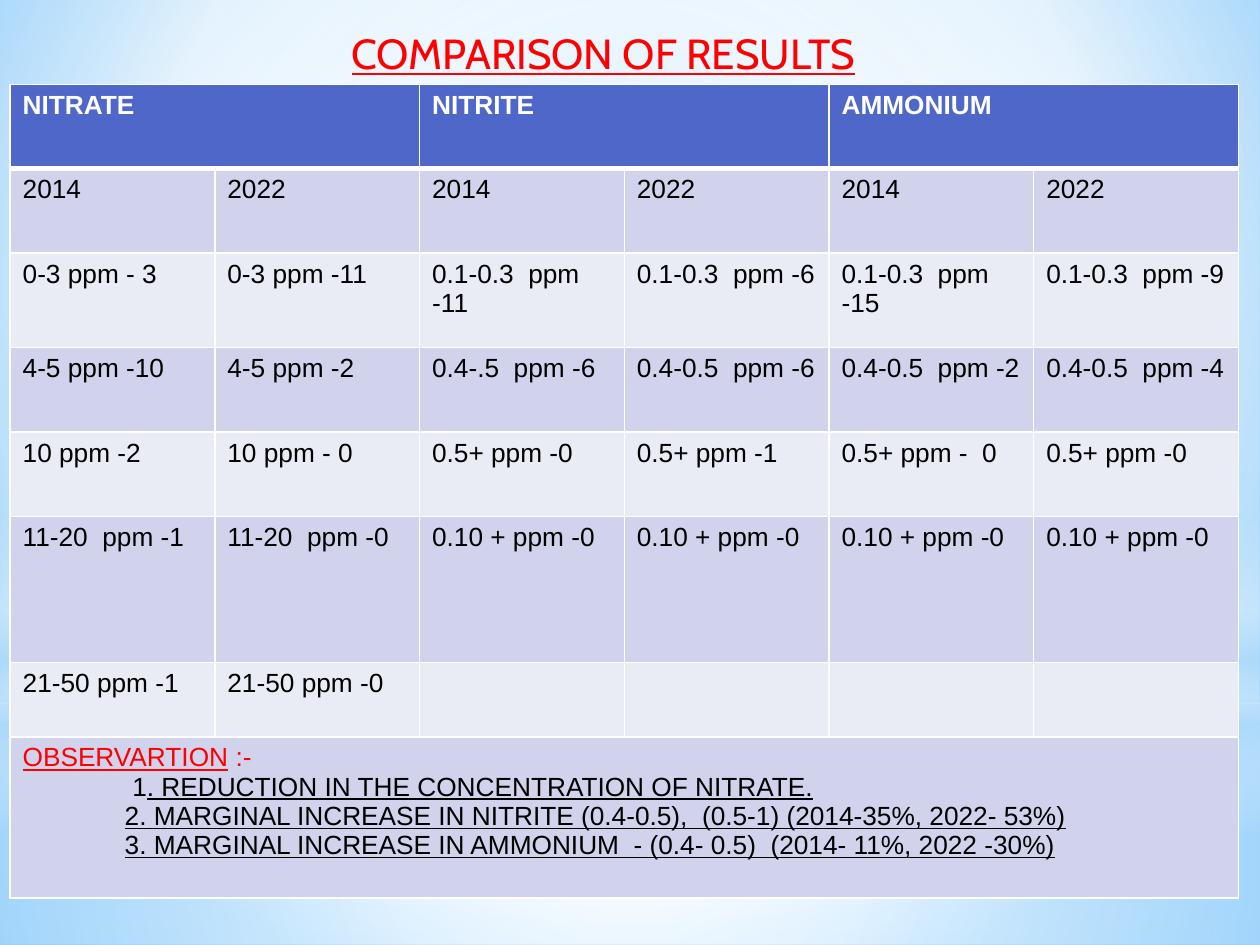
from pptx import Presentation
from pptx.dml.color import RGBColor
from pptx.enum.shapes import MSO_SHAPE
from pptx.enum.text import MSO_ANCHOR, MSO_AUTO_SIZE, PP_ALIGN
from pptx.oxml import parse_xml
from pptx.oxml.ns import nsdecls
from pptx.util import Inches, Pt

RECTANGLE = MSO_SHAPE.RECTANGLE
OVAL = MSO_SHAPE.OVAL
TOP = MSO_ANCHOR.TOP
LEFT = PP_ALIGN.LEFT
GROW = MSO_AUTO_SIZE.SHAPE_TO_FIT_TEXT
TITLE_ONLY = 5

RED = RGBColor(0xFF, 0x00, 0x00)
BLACK = RGBColor(0x00, 0x00, 0x00)
WHITE = RGBColor(0xFF, 0xFF, 0xFF)
HEADER_BLUE = RGBColor(0x4E, 0x67, 0xC8)
BAND_DARK = RGBColor(0xD0, 0xD3, 0xEB)
BAND_LIGHT = RGBColor(0xE9, 0xEB, 0xF5)
SKY = RGBColor(0x9E, 0xD5, 0xFF)
DEEP_SKY = RGBColor(0x5B, 0xB9, 0xFF)
PALE_SKY = RGBColor(0xB4, 0xDC, 0xFA)

# Gradient directions: straight down, or circular around a focus rectangle
DOWNWARD = '<a:lin ang="5400000" scaled="0"/>'
CIRCULAR = ('<a:path path="circle"><a:fillToRect l="{}000" t="{}000" '
            'r="{}000" b="{}000"/></a:path>')
CENTRED = CIRCULAR.format(50, 50, 50, 50)

# Preset, left, top, width, height, (position, colour, opacity) stops, direction
GLOWS = [
    (RECTANGLE, 0, 5.58, 10, 1.92,
     [(0, WHITE, 91), (37, WHITE, 76), (100, PALE_SKY, 79)], CENTRED),
    (RECTANGLE, 0, 0, 10, 5.58,
     [(0, WHITE, 89), (48, WHITE, 62), (100, PALE_SKY, 79)], CENTRED),
    (RECTANGLE, 0, 4.12, 10, 2.5,
     [(0, WHITE, 0), (29, WHITE, 30), (45, PALE_SKY, 40), (55, WHITE, 26),
      (65, PALE_SKY, 60), (100, WHITE, 0)], DOWNWARD),
    (OVAL, 0, 1.75, 10, 5.58, [(0, WHITE, 100), (56, WHITE, 0)], CENTRED),
]

IONS = ["NITRATE", "NITRITE", "AMMONIUM"]
READINGS = [
    ["2014", "2022"] * len(IONS),
    ["0-3 ppm - 3", "0-3 ppm -11", "0.1-0.3  ppm -11", "0.1-0.3  ppm -6",
     "0.1-0.3  ppm -15", "0.1-0.3  ppm -9"],
    ["4-5 ppm -10", "4-5 ppm -2", "0.4-.5  ppm -6", "0.4-0.5  ppm -6",
     "0.4-0.5  ppm -2", "0.4-0.5  ppm -4"],
    ["10 ppm -2", "10 ppm - 0", "0.5+ ppm -0", "0.5+ ppm -1",
     "0.5+ ppm -  0", "0.5+ ppm -0"],
    ["11-20  ppm -1", "11-20  ppm -0"] + ["0.10 + ppm -0"] * 4,
    ["21-50 ppm -1", "21-50 ppm -0"],
]
ROW_HEIGHTS = [0.67, 0.67, 0.75, 0.67, 0.67, 1.16, 0.59, 1.28]
COLUMN_COUNT = 2 * len(IONS)

# Indent in inches, then (text, colour, underlined) runs
OBSERVATIONS = [
    (0, [("OBSERVARTION", RED, True), (" :-", RED, False)]),
    (0.87, [("1", BLACK, False),
            (". REDUCTION IN THE CONCENTRATION OF NITRATE.", BLACK, True)]),
    (0.81, [("2. MARGINAL INCREASE IN NITRITE (0.4-0.5),  (0.5-1) "
             "(2014-35%, 2022- 53%)", BLACK, True)]),
    (0.81, [("3. MARGINAL INCREASE IN AMMONIUM  - (0.4- 0.5)  "
             "(2014- 11%, 2022 -30%)", BLACK, True)]),
]


def apply_gradient(fill, owner, stops, direction):
    fill.gradient()
    stop_xml = "".join(
        f'<a:gs pos="{position}000"><a:srgbClr val="{color}">'
        f'<a:alpha val="{opacity}000"/></a:srgbClr></a:gs>'
        for position, color, opacity in stops)
    gradient = parse_xml(f'<a:gradFill {nsdecls("a")} rotWithShape="1">'
                         f'<a:gsLst>{stop_xml}</a:gsLst>{direction}</a:gradFill>')
    default = owner.xpath(".//a:gradFill")[0]
    default.getparent().replace(default, gradient)


def add_glow(slide, preset, left, top, width, height, stops, direction):
    shape = slide.shapes.add_shape(preset, Inches(left), Inches(top),
                                   Inches(width), Inches(height))
    shape.shadow.inherit = False
    shape.line.fill.background()
    apply_gradient(shape.fill, shape.element, stops, direction)


def format_font(font, size, name, color, bold=False, underline=False):
    font.size = Pt(size)
    font.name = name
    font.color.rgb = color
    font.bold = bold
    font.underline = underline


def set_title(slide, text):
    title = slide.shapes.title
    title.left, title.top = Inches(2.69), Inches(0.17)
    title.width, title.height = Inches(4.33), Inches(0.5)
    text_frame = title.text_frame
    text_frame.text = text
    text_frame.word_wrap = True
    text_frame.auto_size = GROW
    text_frame.vertical_anchor = TOP
    paragraph = text_frame.paragraphs[0]
    paragraph.alignment = LEFT
    format_font(paragraph.runs[0].font, 24, "Cabin", RED, underline=True)
    # Bring the title in front of the glows
    title.element.getparent().append(title.element)


def style_cell(cell, color, bottom_width=1):
    cell.fill.solid()
    cell.fill.fore_color.rgb = color
    properties = cell._tc.get_or_add_tcPr()
    for index, side in enumerate("LRTB"):
        width = Pt(bottom_width if side == "B" else 1)
        properties.insert(index, parse_xml(
            f'<a:ln{side} {nsdecls("a")} w="{width}"><a:solidFill>'
            f'<a:srgbClr val="{WHITE}"/></a:solidFill></a:ln{side}>'))


def write_cell(cell, text, color=BLACK, bold=False):
    cell.text = text
    format_font(cell.text_frame.paragraphs[0].runs[0].font, 15, "Arial", color, bold)


def write_observations(cell):
    text_frame = cell.text_frame
    for index, (indent, runs) in enumerate(OBSERVATIONS):
        paragraph = text_frame.add_paragraph() if index else text_frame.paragraphs[0]
        paragraph._p.get_or_add_pPr().set("marL", str(Inches(indent)))
        for text, color, underline in runs:
            run = paragraph.add_run()
            run.text = text
            format_font(run.font, 15, "Arial", color, underline=underline)


def add_results_table(slide):
    row_count = len(ROW_HEIGHTS)
    table = slide.shapes.add_table(row_count, COLUMN_COUNT, Inches(0.08), Inches(0.67),
                                   Inches(9.75), Inches(6.45)).table
    table.horz_banding = False
    for row_index, height in enumerate(ROW_HEIGHTS):
        table.rows[row_index].height = Inches(height)
        band = BAND_DARK if row_index % 2 else BAND_LIGHT
        for cell in table.rows[row_index].cells:
            if row_index == 0:
                style_cell(cell, HEADER_BLUE, bottom_width=3)
            else:
                style_cell(cell, band)

    # Header: one ion over each pair of years
    for index, ion in enumerate(IONS):
        header = table.cell(0, 2 * index)
        header.merge(table.cell(0, 2 * index + 1))
        write_cell(header, ion, WHITE, bold=True)

    for row_index, readings in enumerate(READINGS, start=1):
        for column_index, reading in enumerate(readings):
            write_cell(table.cell(row_index, column_index), reading)

    # Observations across the full width
    footer = table.cell(row_count - 1, 0)
    footer.merge(table.cell(row_count - 1, COLUMN_COUNT - 1))
    write_observations(footer)


def main():
    presentation = Presentation()
    presentation.slide_width, presentation.slide_height = Inches(10), Inches(7.5)
    slide = presentation.slides.add_slide(presentation.slide_layouts[TITLE_ONLY])

    # Backdrop
    apply_gradient(slide.background.fill, slide.element,
                   [(0, SKY, 100), (60, WHITE, 100), (100, DEEP_SKY, 100)],
                   CIRCULAR.format(20, 10, 20, 60))
    for glow in GLOWS:
        add_glow(slide, *glow)

    # Content
    add_results_table(slide)
    set_title(slide, "COMPARISON OF RESULTS")
    presentation.save("out.pptx")


if __name__ == "__main__":
    main()
